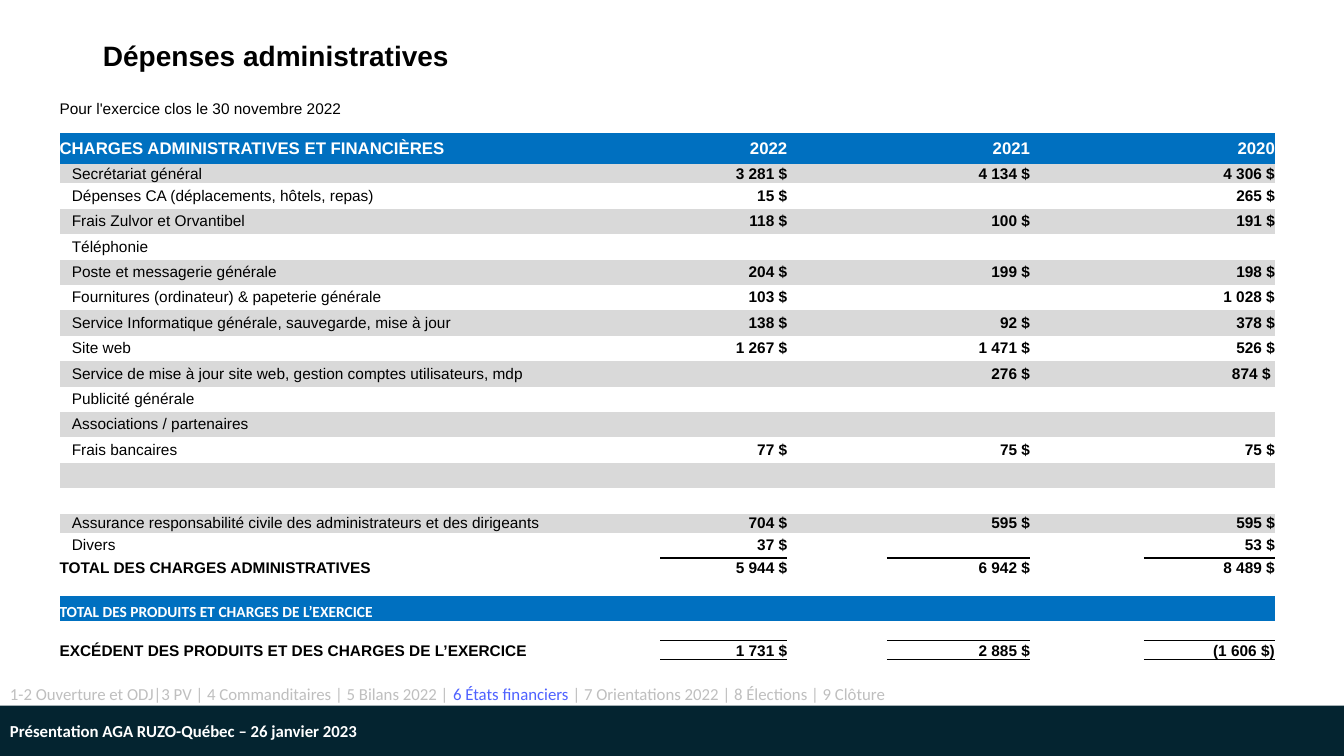
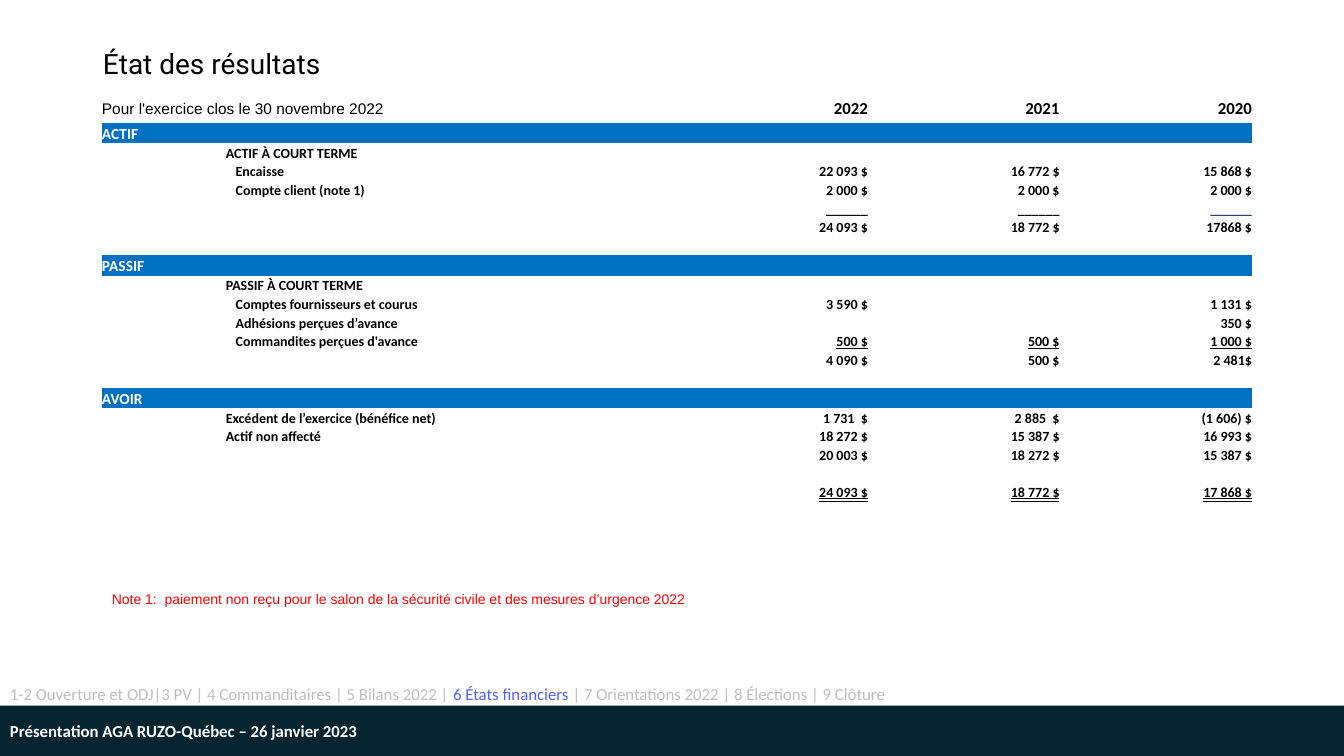
"""Builds two slides of yearly accounts, expenses and balance sheet, with a shared footer."""
from lxml import etree
from pptx import Presentation
from pptx import util as u
from pptx.dml.color import RGBColor
from pptx.enum import shapes, text
from pptx.oxml.ns import qn

BLACK, WHITE, RED = "000000", "FFFFFF", "FF0000"
BLUE, GREY, NIGHT = "0070C0", "D9D9D9", "042430"
NAV_GREY, NAV_ACTIVE, RULE_NAVY = "BFBFBF", "4E61FF", "203864"
NO_STYLE = "{2D5ABB26-0587-4C30-8999-92F81FD0307C}"

WIDTH, HEIGHT, BAND_HEIGHT = 33.87, 19.05, 1.27
FOOTER = "Présentation AGA RUZO-Québec – 26 janvier 2023"
NAV = [
    ("1-2 Ouverture et ODJ|3 PV | 4 Commanditaires | 5 Bilans 2022 | ", NAV_GREY),
    ("6 États financiers ", NAV_ACTIVE),
    ("| 7 Orientations 2022 | 8 Élections | 9 Clôture", NAV_GREY),
]
PERIOD = "Pour l'exercice clos le 30 novembre 2022"
YEARS = ("2022", "2021", "2020")
NOTE = "Note 1:  paiement non reçu pour le salon de la sécurité civile et des mesures d’urgence 2022"

EXPENSE_COLS = (15.14, 3.2, 2.51, 3.61, 2.87, 3.3)
EXPENSE_HEIGHTS = {"period": 1.37, "head": 0.79, "item": 0.64, "tight": 0.48,
                   "total": 0.48, "band": 0.64}
EXPENSES = [
    ("period", PERIOD),
    ("head", "CHARGES ADMINISTRATIVES ET FINANCIÈRES", *YEARS),
    ("tight", "Secrétariat général", "3 281 $", "4 134 $", "4 306 $"),
    ("item", "Dépenses CA (déplacements, hôtels, repas)", "15 $", "", "265 $"),
    ("item", "Frais Zulvor et Orvantibel", "118 $", "100 $", "191 $"),
    ("item", "Téléphonie"),
    ("item", "Poste et messagerie générale", "204 $", "199 $", "198 $"),
    ("item", "Fournitures (ordinateur) & papeterie générale", "103 $", "", "1 028 $"),
    ("item", "Service Informatique générale, sauvegarde, mise à jour", "138 $", "92 $", "378 $"),
    ("item", "Site web", "1 267 $", "1 471 $", "526 $"),
    ("item", "Service de mise à jour site web, gestion comptes utilisateurs, mdp", "", "276 $", "874 $ "),
    ("item", "Publicité générale"),
    ("item", "Associations / partenaires"),
    ("item", "Frais bancaires", "77 $", "75 $", "75 $"),
    ("item", ""),
    ("item", ""),
    ("tight", "Assurance responsabilité civile des administrateurs et des dirigeants", "704 $", "595 $", "595 $"),
    ("item", "Divers", "37 $", "", "53 $"),
    ("total", "TOTAL DES CHARGES ADMINISTRATIVES", "5 944 $", "6 942 $", "8 489 $"),
    ("tight", ""),
    ("band", "TOTAL DES PRODUITS ET CHARGES DE L’EXERCICE"),
    ("tight", ""),
    ("total", "EXCÉDENT DES PRODUITS ET DES CHARGES DE L’EXERCICE", "1 731 $", "2 885 $", "(1 606 $)"),
]
STRIPED_ROWS = range(2, 17, 2)
RULED_ROWS = {17: "B", 18: "T", 21: "B", 22: "TB"}

BALANCE_COLS = (3.12, 11.28, 4.9, 4.83, 4.85)
BALANCE_HEIGHTS = {"period": 0.68, "band": 0.52}
BALANCE_ROW = 0.47
RULE = "______"
BALANCE = [
    ("period", PERIOD, *YEARS),
    ("band", "ACTIF"),
    ("group", "ACTIF À COURT TERME"),
    ("item", "Encaisse", "22 093 $", "16 772 $", "15 868 $"),
    ("item", "Compte client (note 1)", "2 000 $", "2 000 $", "2 000 $"),
    ("rule", "", RULE, RULE, RULE),
    ("group", "", "24 093 $", "18 772 $", "17868 $"),
    ("group", ""),
    ("band", "PASSIF"),
    ("group", "PASSIF À COURT TERME"),
    ("item", "Comptes fournisseurs et courus", "3 590 $", "", "1 131 $"),
    ("item", "Adhésions perçues d’avance", "", "", "350 $"),
    ("last", "Commandites perçues d'avance", "500 $", "500 $", "1 000 $"),
    ("group", "", "4 090 $", "500 $", "2 481$"),
    ("group", ""),
    ("band", "AVOIR"),
    ("group", "Excédent de l’exercice (bénéfice net)", "1 731  $", "2 885  $", "(1 606) $"),
    ("group", "Actif non affecté", "18 272 $", "15 387 $", "16 993 $"),
    ("group", "", "20 003 $", "18 272 $", "15 387 $"),
    ("group", ""),
    ("grand", "", "24 093 $", "18 772 $", "17 868 $"),
    ("group", ""),
]
UNDERLINES = {"last": True, "grand": text.MSO_UNDERLINE.DOUBLE_LINE}


def rgb(value):
    return RGBColor.from_string(value)


def style(font, size, name, color=BLACK, bold=False):
    font.size, font.name, font.bold = u.Pt(size), name, bold
    font.color.rgb = rgb(color)


def cm_box(*lengths):
    return [u.Cm(n) for n in lengths]


def add_text(s, box, runs, size, name):
    tf = s.shapes.add_textbox(*cm_box(*box)).text_frame
    tf.word_wrap = True
    p = tf.paragraphs[0]
    style(p.font, size, name)
    for words, color in runs:
        r = p.add_run()
        r.text = words
        r.font.color.rgb = rgb(color)


def add_slide(prs, title, box, name, bold):
    s = prs.slides.add_slide(prs.slide_layouts[5])
    sp = s.shapes.title
    sp.left, sp.top, sp.width, sp.height = cm_box(*box)
    tf = sp.text_frame
    tf.text = title
    tf.auto_size = text.MSO_AUTO_SIZE.NONE
    tf.vertical_anchor = text.MSO_ANCHOR.MIDDLE
    p = tf.paragraphs[0]
    p.alignment, p.line_spacing = text.PP_ALIGN.LEFT, 0.9
    style(p.font, 20, name, bold=bold)

    band_top = HEIGHT - BAND_HEIGHT
    sp = s.shapes.add_shape(shapes.MSO_SHAPE.RECTANGLE,
                            *cm_box(0, band_top, WIDTH, BAND_HEIGHT))
    sp.shadow.inherit = False
    sp.fill.solid()
    sp.fill.fore_color.rgb = rgb(NIGHT)
    sp.line.fill.background()
    tf = sp.text_frame
    tf.text = FOOTER
    tf.vertical_anchor = text.MSO_ANCHOR.MIDDLE
    p = tf.paragraphs[0]
    p.alignment = text.PP_ALIGN.LEFT
    style(p.font, 12, "Calibri", WHITE, True)

    add_text(s, (0, 17.1, WIDTH, BAND_HEIGHT), NAV, 12, "Calibri")
    return s


def add_table(s, left, top, widths, heights):
    box = cm_box(left, top, sum(widths), sum(heights))
    frame = s.shapes.add_table(len(heights), len(widths), *box)
    table = frame.table
    table.first_row = table.horz_banding = False
    table._tbl.tblPr.find(qn("a:tableStyleId")).text = NO_STYLE
    for col, width in zip(table.columns, widths):
        col.width = u.Cm(width)
    for row, height in zip(table.rows, heights):
        row.height = u.Cm(height)
    return table


def fill_cell(cell, words, size, name, color, bold, fill, anchor, indent=0, right=False):
    cell.margin_left = u.Cm(indent)
    cell.margin_right = cell.margin_top = cell.margin_bottom = 0
    cell.vertical_anchor = anchor
    if fill:
        cell.fill.solid()
        cell.fill.fore_color.rgb = rgb(fill)
    else:
        cell.fill.background()
    p = cell.text_frame.paragraphs[0]
    style(p.font, size, name, color, bold)
    if right:
        p.alignment = text.PP_ALIGN.RIGHT
    if words:
        p.add_run().text = words
    else:
        etree.SubElement(p._p, qn("a:endParaRPr"), sz=str(size * 100))
    return p


def rule_cell(cell, sides):
    tc_pr = cell._tc.get_or_add_tcPr()
    for i, side in enumerate("TB"):
        ln = etree.Element(qn(f"a:ln{side}"), w=str(u.Pt(1.5)))
        if side in sides:
            solid = etree.SubElement(ln, qn("a:solidFill"))
            etree.SubElement(solid, qn("a:srgbClr"), val=BLACK)
        else:
            etree.SubElement(ln, qn("a:noFill"))
        tc_pr.insert(i, ln)


def build_expenses(s):
    heights = [EXPENSE_HEIGHTS[kind] for kind, *_ in EXPENSES]
    table = add_table(s, 1.5, 1.98, EXPENSE_COLS, heights)
    for i, (kind, label, *values) in enumerate(EXPENSES):
        blue = kind in ("head", "band")
        fill = BLUE if blue else GREY if i in STRIPED_ROWS else None
        color = WHITE if blue else BLACK
        size = 12 if kind == "head" else 11
        name = "Calibri" if kind == "band" else "Arial"
        low = kind in ("period", "total", "band")
        anchor = text.MSO_ANCHOR.BOTTOM if low else text.MSO_ANCHOR.MIDDLE
        indent = 0.31 if kind in ("item", "tight") else 0
        bold = blue or kind == "total"
        amounts = dict(zip((1, 3, 5), values))
        fill_cell(table.cell(i, 0), label, size, name, color, bold, fill, anchor, indent)
        for j in range(1, len(EXPENSE_COLS)):
            fill_cell(table.cell(i, j), amounts.get(j, ""), size, name, color, True,
                      fill, anchor, right=True)
            if j % 2:
                rule_cell(table.cell(i, j), RULED_ROWS.get(i, ""))
    table.cell(0, 0).margin_bottom = u.Cm(0.38)


def build_balance(s):
    heights = [BALANCE_HEIGHTS.get(kind, BALANCE_ROW) for kind, *_ in BALANCE]
    table = add_table(s, 2.57, 2.41, BALANCE_COLS, heights)
    table.cell(0, 0).merge(table.cell(0, 1))
    for i, (kind, label, *values) in enumerate(BALANCE):
        band, period = kind == "band", kind == "period"
        fill = BLUE if band else None
        color = WHITE if band else BLACK
        anchor = text.MSO_ANCHOR.MIDDLE if period else text.MSO_ANCHOR.BOTTOM
        indent = 0.25 if kind in ("item", "last") else 0
        labels = (label, "") if band or period else ("", label)
        size = 11 if band or period else 10
        name = "Arial" if period else "Calibri"
        for j, words in enumerate(labels):
            fill_cell(table.cell(i, j), words, size, name, color, not period,
                      fill, anchor, indent)
        for j, words in enumerate(values or [""] * len(YEARS), 2):
            ink = RULE_NAVY if kind == "rule" and j == 4 else color
            p = fill_cell(table.cell(i, j), words, 12 if period else size, "Calibri",
                          ink, True, fill, anchor, right=True)
            if kind in UNDERLINES:
                p.font.underline = UNDERLINES[kind]


def main():
    prs = Presentation()
    prs.slide_width, prs.slide_height = cm_box(WIDTH, HEIGHT)
    s = add_slide(prs, "Dépenses administratives", (2.34, 1.02, 10.9, 0.86), "Arial", True)
    build_expenses(s)
    s = add_slide(prs, "État des résultats", (2.34, 1.02, 6.73, 1.27), "Roboto", False)
    build_balance(s)
    add_text(s, (2.57, 14.75, 22.56, 0.69), [(NOTE, RED)], 10, "Arial")
    prs.save("out.pptx")


if __name__ == "__main__":
    main()
